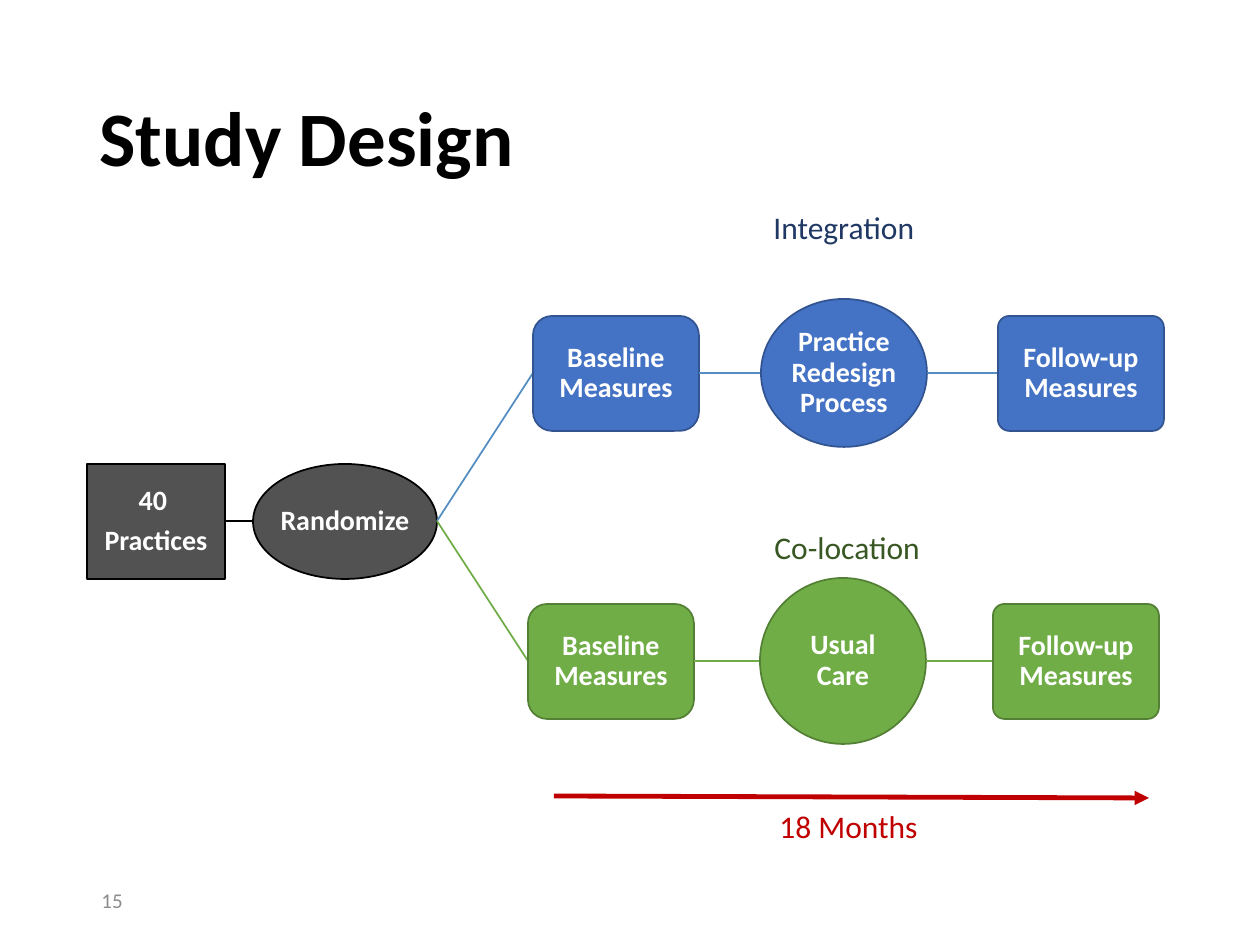
from dataclasses import dataclass

from lxml import etree
from pptx import Presentation
from pptx import util as u
from pptx.dml.color import RGBColor
from pptx.enum import shapes, text
from pptx.oxml.ns import qn

PX_PER_INCH = 126
FONT = "Calibri"
BLACK = RGBColor(0x00, 0x00, 0x00)
WHITE = RGBColor(0xFF, 0xFF, 0xFF)
GRAY = RGBColor(0x52, 0x52, 0x52)
NUMBER_GRAY = RGBColor(0x8C, 0x8C, 0x8C)
BLUE = RGBColor(0x44, 0x72, 0xC4)
BLUE_EDGE = RGBColor(0x32, 0x54, 0x91)
BLUE_LINK = RGBColor(0x53, 0x8D, 0xC1)
NAVY = RGBColor(0x20, 0x38, 0x64)
GREEN = RGBColor(0x70, 0xAD, 0x47)
GREEN_EDGE = RGBColor(0x53, 0x80, 0x35)
DARK_GREEN = RGBColor(0x38, 0x57, 0x23)
RED = RGBColor(0xC0, 0x00, 0x00)

RECT = shapes.MSO_SHAPE.RECTANGLE
ROUND = shapes.MSO_SHAPE.ROUNDED_RECTANGLE
OVAL = shapes.MSO_SHAPE.OVAL
LEFT, CENTER = text.PP_ALIGN.LEFT, text.PP_ALIGN.CENTER
TOP, MIDDLE = text.MSO_ANCHOR.TOP, text.MSO_ANCHOR.MIDDLE


@dataclass
class Node:
    label: str
    kind: shapes.MSO_SHAPE
    x: int
    y: int
    w: int
    h: int
    fill: RGBColor
    edge: RGBColor
    corner: float | None = None
    wrap: bool = True

    @property
    def left(self) -> tuple[int, int]:
        return self.x, self.y + self.h // 2

    @property
    def right(self) -> tuple[int, int]:
        return self.x + self.w, self.y + self.h // 2


@dataclass
class Arm:
    x: int
    mid_y: int
    treatment: str
    treatment_x: int
    treatment_h: int
    fill: RGBColor
    edge: RGBColor
    link: RGBColor

    def nodes(self) -> list[Node]:
        w, h = 166, 115
        y = self.mid_y - h // 2
        colors = self.fill, self.edge
        return [
            Node("Baseline Measures", ROUND, self.x, y, w, h, *colors),
            Node(self.treatment, OVAL, self.treatment_x,
                 self.mid_y - self.treatment_h // 2, w, self.treatment_h, *colors),
            Node("Follow-up Measures", ROUND, self.x + 465, y, w, h, *colors, 0.1),
        ]


@dataclass
class Label:
    content: str
    x: int
    y: int
    w: int
    h: int
    color: RGBColor
    size: int = 18
    align: text.PP_ALIGN = LEFT
    anchor: text.MSO_ANCHOR = TOP


def px(n: int) -> u.Emu:
    return u.Emu(round(n * 914400 / PX_PER_INCH))


def write(tf, content: str, *, size: int, color: RGBColor, bold: bool = False,
          align=LEFT, anchor=TOP, wrap: bool = True, spacing: float | None = None,
          after: float | None = None) -> None:
    """Fill a text frame, one paragraph for each line of content."""
    tf.word_wrap = wrap
    tf.vertical_anchor = anchor
    for i, line in enumerate(content.split("\n")):
        p = tf.add_paragraph() if i else tf.paragraphs[0]
        p.alignment = align
        p.line_spacing = spacing
        if after is not None:
            p.space_after = u.Pt(after)
        r = p.add_run()
        r.text = line
        r.font.name, r.font.size, r.font.bold = FONT, u.Pt(size), bold
        r.font.color.rgb = color


def draw_node(s, node: Node) -> None:
    sp = s.shapes.add_shape(node.kind, *map(px, (node.x, node.y, node.w, node.h)))
    sp.shadow.inherit = False
    if node.corner is not None:
        sp.adjustments[0] = node.corner
    sp.fill.solid()
    sp.fill.fore_color.rgb = node.fill
    sp.line.color.rgb = node.edge
    sp.line.width = u.Pt(1)
    tf = sp.text_frame
    tf.margin_left = tf.margin_right = tf.margin_top = tf.margin_bottom = px(1)
    write(tf, node.label, size=16, color=WHITE, bold=True, align=CENTER,
          anchor=MIDDLE, wrap=node.wrap, spacing=0.9, after=5.6)


def draw_line(s, start: tuple[int, int], end: tuple[int, int], color: RGBColor,
              width: float = 1, arrow: bool = False) -> None:
    c = s.shapes.add_connector(shapes.MSO_CONNECTOR.STRAIGHT, *map(px, start + end))
    c.line.color.rgb = color
    c.line.width = u.Pt(width)
    if arrow:
        etree.SubElement(c.line._get_or_add_ln(), qn("a:tailEnd"), type="triangle")
    etree.SubElement(c._element.spPr, qn("a:effectLst"))


def draw_label(s, label: Label) -> None:
    sp = s.shapes.add_textbox(*map(px, (label.x, label.y, label.w, label.h)))
    write(sp.text_frame, label.content, size=label.size, color=label.color,
          align=label.align, anchor=label.anchor)


def main() -> None:
    prs = Presentation()
    prs.slide_width, prs.slide_height = u.Inches(10), u.Inches(7.5)
    s = prs.slides.add_slide(prs.slide_layouts[5])

    title = s.shapes.title
    title.left, title.top, title.width, title.height = map(px, (87, 50, 1086, 183))
    write(title.text_frame, "Study Design", size=44, color=BLACK, bold=True,
          anchor=MIDDLE, spacing=0.9)

    practices = Node("40 \nPractices", RECT, 87, 464, 138, 115, GRAY, BLACK)
    randomize = Node("Randomize", OVAL, 253, 464, 184, 115, GRAY, BLACK, wrap=False)
    draw_line(s, practices.right, randomize.left, BLACK)
    draw_node(s, practices)
    draw_node(s, randomize)

    arms = [
        Arm(533, 373, "Practice Redesign Process", 761, 148, BLUE, BLUE_EDGE, BLUE_LINK),
        Arm(528, 661, "Usual Care", 760, 166, GREEN, GREEN_EDGE, GREEN),
    ]
    for arm in arms:
        previous = randomize
        for node in arm.nodes():
            draw_line(s, previous.right, node.left, arm.link)
            draw_node(s, node)
            previous = node

    draw_line(s, (554, 796), (1149, 798), RED, 2.75, arrow=True)
    labels = [
        Label("Integration", 761, 202, 168, 50, NAVY),
        Label("Co-location", 762, 522, 185, 50, DARK_GREEN),
        Label("18 Months", 764, 801, 169, 50, RED, align=CENTER),
        Label("15", 89, 875, 283, 50, NUMBER_GRAY, 12, anchor=MIDDLE),
    ]
    for label in labels:
        draw_label(s, label)

    prs.save("out.pptx")


if __name__ == "__main__":
    main()
